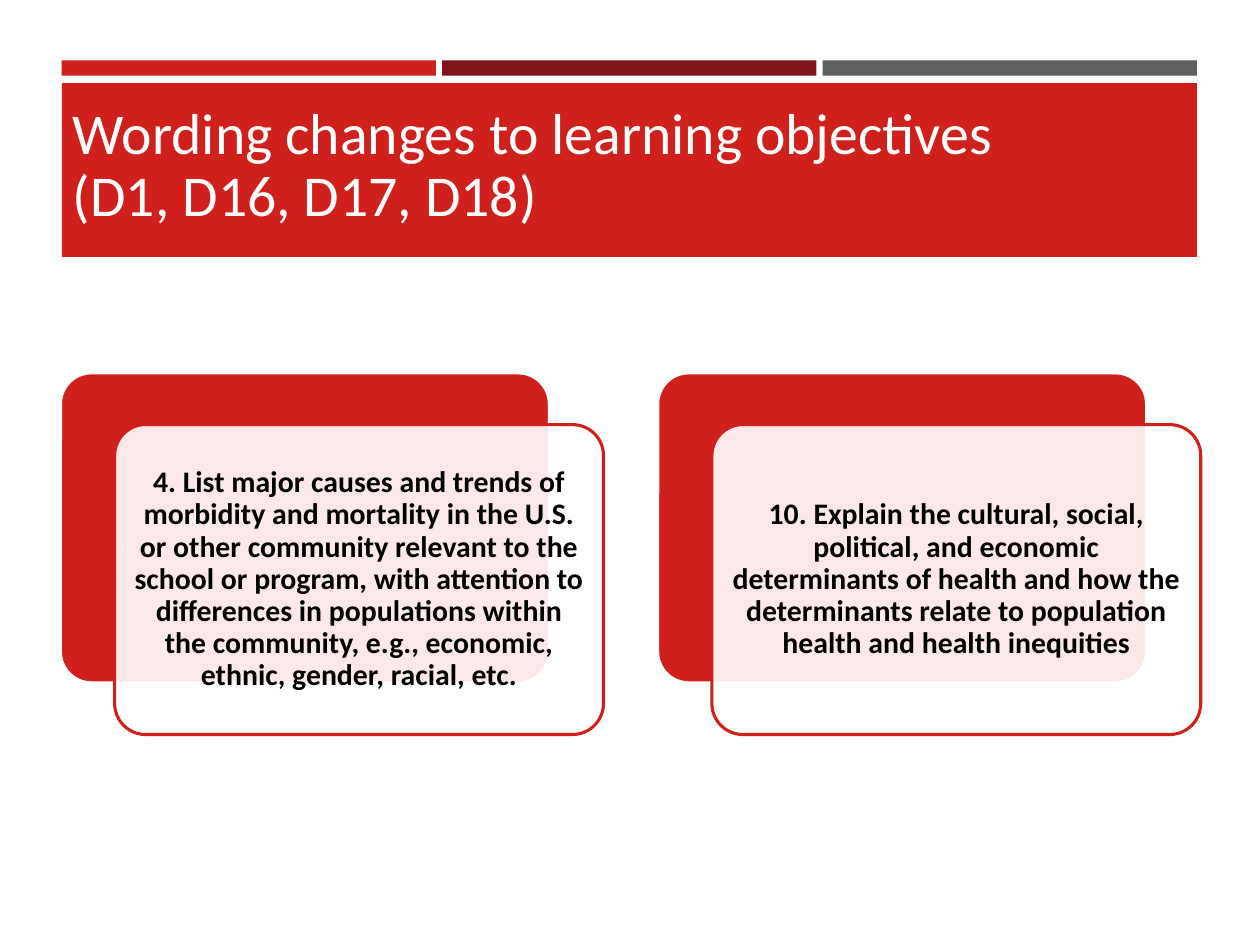
from dataclasses import dataclass

from lxml import etree
from pptx import Presentation
from pptx.dml.color import RGBColor
from pptx.enum.shapes import MSO_SHAPE
from pptx.enum.text import MSO_ANCHOR, PP_ALIGN
from pptx.oxml.ns import qn
from pptx.util import Inches, Pt


@dataclass(frozen=True)
class Theme:
    red: str = "D0201C"
    dark_red: str = "811419"
    grey: str = "5F6062"
    white: str = "FFFFFF"
    title_text: str = "FFFEFF"
    body_text: str = "000000"
    font: str = "Calibri"
    title_size: float = 33
    body_size: float = 17
    outline: float = 1.75
    card_opacity: int = 90


class SlideBuilder:
    def __init__(self, slide, theme):
        self.slide = slide
        self.theme = theme

    def block(self, kind, left, top, width, height, color, outline=None):
        """Add a filled shape, outlined only when a line colour is given."""
        block = self.slide.shapes.add_shape(
            kind, Inches(left), Inches(top), Inches(width), Inches(height))
        block.shadow.inherit = False
        block.fill.solid()
        block.fill.fore_color.rgb = RGBColor.from_string(color)
        if outline:
            block.line.color.rgb = RGBColor.from_string(outline)
            block.line.width = Pt(self.theme.outline)
        else:
            block.line.fill.background()
        return block

    def set_text(self, frame, text, size, color, align, bold=False):
        frame.word_wrap = True
        frame.vertical_anchor = MSO_ANCHOR.MIDDLE
        paragraph = frame.paragraphs[0]
        paragraph.text = text
        paragraph.alignment = align
        paragraph.line_spacing = 0.9
        for run in paragraph.runs:
            run.font.name = self.theme.font
            run.font.size = Pt(size)
            run.font.bold = bold
            run.font.color.rgb = RGBColor.from_string(color)

    def title(self, text, left, top, width, height):
        title = self.slide.shapes.add_textbox(
            Inches(left), Inches(top), Inches(width), Inches(height))
        self.set_text(title.text_frame, text, self.theme.title_size,
                      self.theme.title_text, PP_ALIGN.LEFT)

    def objective_card(self, text, left, top):
        """Add a red panel with a translucent text card offset over it."""
        theme = self.theme
        width, height = 3.88, 2.46
        panel = self.block(MSO_SHAPE.ROUNDED_RECTANGLE, left, top,
                           width, height, theme.red, theme.white)
        card = self.block(MSO_SHAPE.ROUNDED_RECTANGLE, left + 0.43, top + 0.41,
                          width, height, theme.white, theme.red)
        for rounded in (panel, card):
            rounded.adjustments[0] = 0.1
        fill_color = card.fill._xPr.find(qn("a:solidFill"))[0]
        etree.SubElement(fill_color, qn("a:alpha"),
                         val=str(theme.card_opacity * 1000))
        frame = card.text_frame
        frame.margin_left = frame.margin_right = Inches(0.07)
        frame.margin_top = frame.margin_bottom = Inches(0.07)
        self.set_text(frame, text, theme.body_size, theme.body_text,
                      PP_ALIGN.CENTER, bold=True)


OBJECTIVES = (
    "4. List major causes and trends of morbidity and mortality in the U.S. "
    "or other community relevant to the school or program, with attention to "
    "differences in populations within the community, e.g., economic, ethnic, "
    "gender, racial, etc.",
    "10. Explain the cultural, social, political, and economic determinants "
    "of health and how the determinants relate to population health and "
    "health inequities",
)


def main():
    theme = Theme()
    presentation = Presentation()
    presentation.slide_width = Inches(10)
    presentation.slide_height = Inches(7.5)
    builder = SlideBuilder(
        presentation.slides.add_slide(presentation.slide_layouts[6]), theme)

    for column, color in enumerate((theme.red, theme.dark_red, theme.grey)):
        builder.block(MSO_SHAPE.RECTANGLE, 0.49 + column * 3.02, 0.48,
                      2.97, 0.12, color)
    builder.block(MSO_SHAPE.RECTANGLE, 0.49, 0.66, 9.01, 1.38, theme.red)
    builder.title("Wording changes to learning objectives\v(D1, D16, D17, D18)",
                  0.48, 0.77, 9.05, 1.11)

    for column, objective in enumerate(OBJECTIVES):
        builder.objective_card(objective, 0.48 + column * 4.74, 2.96)

    presentation.save("out.pptx")


if __name__ == "__main__":
    main()
